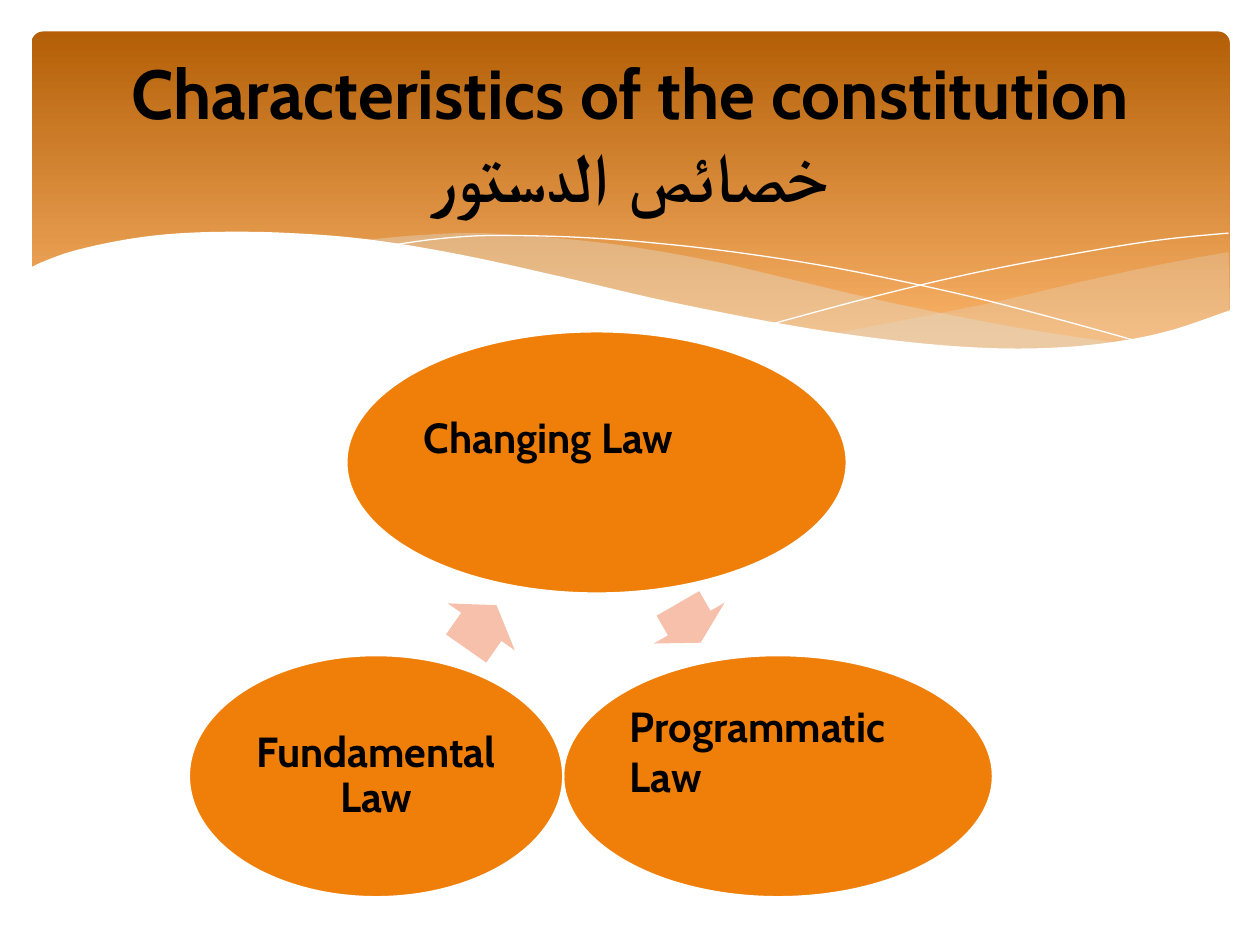
from lxml import etree
from pptx import Presentation
from pptx.dml.color import RGBColor
from pptx.enum.shapes import MSO_SHAPE
from pptx.enum.text import MSO_ANCHOR, PP_ALIGN
from pptx.oxml.ns import qn
from pptx.util import Inches, Pt

ROUNDED, OVAL, ARROW = MSO_SHAPE.ROUNDED_RECTANGLE, MSO_SHAPE.OVAL, MSO_SHAPE.RIGHT_ARROW
LEFT, CENTER = PP_ALIGN.LEFT, PP_ALIGN.CENTER
MIDDLE = MSO_ANCHOR.MIDDLE
FONT = "Cabin"
COLORS = {"dark": "B45F07", "light": "F9B268", "ribbon": "E3DED1", "white": "FFFFFF",
          "oval": "F07F09", "arrow": "F6C0AB", "text": "000000"}

# Knots of the header curves, in inches from the header's top left corner
RIGHT_RIBBON = [
    [(9.5, 1.75), (8.96, 1.85), (8.36, 1.98), (7.54, 2.17), (6.36, 2.4)],
    [(6.36, 2.4), (6.94, 2.47), (7.56, 2.52), (7.99, 2.52), (8.56, 2.49), (9.1, 2.37),
     (9.51, 2.22)],
]
CENTER_RIBBON = [
    [(8.68, 2.48), (7.82, 2.35), (6.81, 2.15), (6.04, 1.97), (5.44, 1.83), (4.77, 1.71),
     (4.17, 1.64), (3.55, 1.6), (3.03, 1.62), (2.61, 1.66)],
    [(2.61, 1.66), (3.37, 1.78), (4.24, 1.97), (5.05, 2.15), (5.93, 2.33), (6.7, 2.45),
     (7.48, 2.52), (8.13, 2.53), (8.68, 2.48)],
]
FALLING_LINE = [(2.84, 1.7), (3.19, 1.65), (3.62, 1.62), (4.25, 1.63), (4.85, 1.67),
                (5.57, 1.75), (6.4, 1.88), (7.35, 2.08), (8.06, 2.26), (8.82, 2.47)]
RISING_LINE = [(5.88, 2.32), (6.7, 2.1), (7.51, 1.91), (8.41, 1.74), (8.99, 1.65), (9.5, 1.6)]
FRONT_WAVE = [
    [(9.52, 2.21), (9.05, 2.37), (8.62, 2.46), (8.12, 2.51), (7.53, 2.51), (6.83, 2.45),
     (6.01, 2.33), (5.04, 2.14), (4.22, 1.95), (3.4, 1.77), (2.67, 1.65), (2.05, 1.6),
     (1.52, 1.59), (1.07, 1.61), (0.7, 1.66), (0.34, 1.74), (0.11, 1.82), (-0.02, 1.88)],
    [(-0.02, 3.04), (9.52, 3.04)],
]


def color(name):
    return RGBColor.from_string(COLORS[name])


def smooth(knots, steps=6):
    """Return points on a Catmull-Rom curve through the knots."""
    if len(knots) < 3:
        return knots
    padded = [knots[0], *knots, knots[-1]]
    points = [knots[0]]
    for a, b, c, d in zip(padded, padded[1:], padded[2:], padded[3:]):
        for step in range(1, steps + 1):
            t = step / steps
            points.append(tuple(
                (2 * q + (r - p) * t + (2 * p - 5 * q + 4 * r - s) * t ** 2
                 + (3 * q - p - 3 * r + s) * t ** 3) / 2
                for p, q, r, s in zip(a, b, c, d)))
    return points


def add_curve(slide, box, edges, closed=True):
    left, top = box[:2]
    points = [(Inches(left + x), Inches(top + y)) for edge in edges for x, y in smooth(edge)]
    builder = slide.shapes.build_freeform(*points[0], scale=1.0)
    builder.add_line_segments(points[1:], close=closed)
    shape = builder.convert_to_shape()
    shape.shadow.inherit = False
    return shape


def add_wave(slide, box, edges, fill, opacity=100):
    shape = add_curve(slide, box, edges)
    shape.fill.solid()
    shape.fill.fore_color.rgb = color(fill)
    shape.line.fill.background()
    if opacity < 100:
        value = shape.fill._xPr.find(qn("a:solidFill"))[0]
        etree.SubElement(value, qn("a:alpha"), val=str(opacity * 1000))


def add_hairline(slide, box, knots):
    shape = add_curve(slide, box, [knots], closed=False)
    shape.fill.background()
    shape.line.color.rgb = color("white")
    shape.line.width = Pt(0)


def add_preset(slide, kind, box, fill=None):
    shape = slide.shapes.add_shape(kind, *map(Inches, box))
    shape.shadow.inherit = False
    shape.line.fill.background()
    if fill:
        shape.fill.solid()
        shape.fill.fore_color.rgb = color(fill)
    return shape


def add_text(slide, box, text, size, align=CENTER, spacing=1.0, inset=0.03, bottom=0.03):
    frame = slide.shapes.add_textbox(*map(Inches, box)).text_frame
    frame.word_wrap = True
    frame.vertical_anchor = MIDDLE
    frame.margin_left = frame.margin_right = Inches(inset)
    frame.margin_top, frame.margin_bottom = Inches(0.03), Inches(bottom)
    paragraph = frame.paragraphs[0]
    paragraph.text = text
    paragraph.alignment = align
    paragraph.line_spacing = spacing
    font = paragraph.font
    font.name, font.size, font.bold = FONT, Pt(size), True
    font.color.rgb = color("text")


def add_header(slide, box):
    panel = add_preset(slide, ROUNDED, box)
    panel.adjustments[0] = 0.034
    panel.fill.gradient()
    panel.fill.gradient_angle = 270
    for stop, (position, name) in zip(panel.fill.gradient_stops, [(0, "dark"), (0.9, "light")]):
        stop.position = position
        stop.color.rgb = color(name)
    add_wave(slide, box, RIGHT_RIBBON, "ribbon", 29)
    add_wave(slide, box, CENTER_RIBBON, "ribbon", 40)
    add_hairline(slide, box, FALLING_LINE)
    add_hairline(slide, box, RISING_LINE)
    add_wave(slide, box, FRONT_WAVE, "white")


def add_law(slide, box, text, align=CENTER, spacing=1.0, bottom=0.03):
    oval = add_preset(slide, OVAL, box, "oval")
    oval.line.color.rgb = color("white")
    oval.line.width = Pt(1.25)
    left, top, width, height = box
    inner = 0.5 ** 0.5
    text_box = (left + width * (1 - inner) / 2, top + height * (1 - inner) / 2,
                width * inner, height * inner)
    add_text(slide, text_box, text, 24, align, spacing, bottom=bottom)


def add_cycle(slide, box):
    """Place three laws and the arrows between them."""
    left, top = box[:2]
    add_law(slide, (left + 1.25, top, 3.97, 2.08), "Changing Law", LEFT, bottom=0.43)
    add_law(slide, (left + 2.97, top + 2.57, 3.41, 1.92), "Programmatic Law", LEFT, bottom=0.43)
    add_law(slide, (left, top + 2.57, 2.97, 1.92), "Fundamental Law", spacing=0.9)
    for x, y, width, rotation in [(3.79, 1.99, 0.36, 60), (2.11, 2.02, 0.42, 305)]:
        arrow = add_preset(slide, ARROW, (left + x, top + y, width, 0.65), "arrow")
        arrow.adjustments[0], arrow.adjustments[1] = 0.6, 0.5
        arrow.rotation = rotation


def main():
    presentation = Presentation()
    presentation.slide_width, presentation.slide_height = Inches(10), Inches(7.5)
    slide = presentation.slides.add_slide(presentation.slide_layouts[6])
    add_header(slide, (0.25, 0.25, 9.51, 2.7))
    add_cycle(slide, (1.5, 2.63, 6.38, 4.49))
    add_text(slide, (0.5, 0.37, 9, 1.37),
             "Characteristics of the constitution\vخصائص الدستور", 39.6, inset=0.1)
    presentation.save("out.pptx")


if __name__ == "__main__":
    main()
